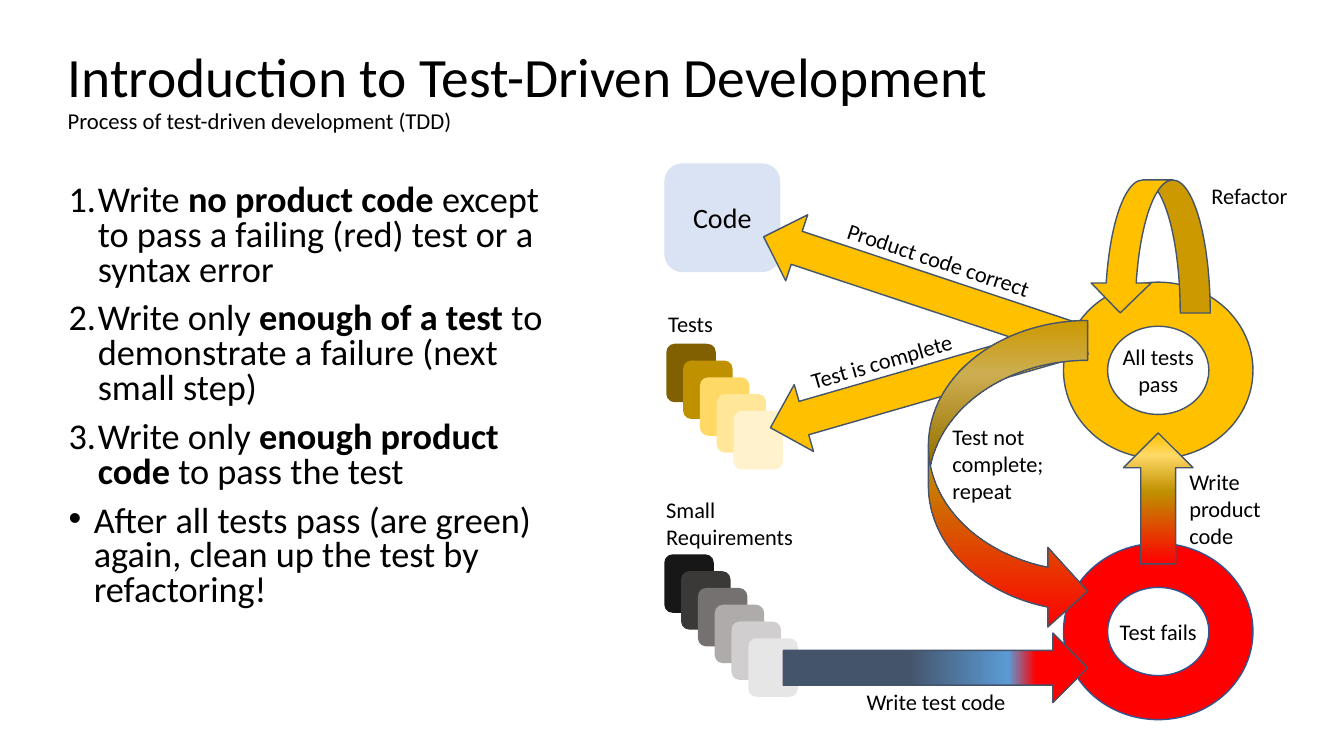
"""Build the slide that introduces the test-driven development cycle."""
from lxml import etree
from pptx import Presentation
from pptx.dml.color import RGBColor
from pptx.enum.shapes import MSO_SHAPE
from pptx.enum.text import MSO_ANCHOR, MSO_AUTO_SIZE, PP_ALIGN
from pptx.oxml.ns import qn
from pptx.util import Inches, Pt

WIDE, HIGH = Inches(13.33), Inches(7.5)
CARD, DONUT = MSO_SHAPE.ROUNDED_RECTANGLE, MSO_SHAPE.DONUT
ARROW, BEND = MSO_SHAPE.RIGHT_ARROW, MSO_SHAPE.CURVED_RIGHT_ARROW
LEFT, MID, RIGHT = PP_ALIGN.LEFT, PP_ALIGN.CENTER, PP_ALIGN.RIGHT
CENTER, TOP = MSO_ANCHOR.MIDDLE, MSO_ANCHOR.TOP
FIXED, GROW = MSO_AUTO_SIZE.NONE, MSO_AUTO_SIZE.SHAPE_TO_FIT_TEXT

BLACK = RGBColor(0x00, 0x00, 0x00)
RED = RGBColor(0xFF, 0x00, 0x00)
GOLD = RGBColor(0xFF, 0xC0, 0x00)
AMBER = RGBColor(0xFF, 0xD9, 0x66)
OCHRE = RGBColor(0xBF, 0x90, 0x00)
BROWN = RGBColor(0x80, 0x60, 0x00)
CREAM = RGBColor(0xFF, 0xE6, 0x99)
PALE = RGBColor(0xFF, 0xF2, 0xCC)
SLATE = RGBColor(0x44, 0x54, 0x6A)
NAVY = RGBColor(0x32, 0x54, 0x91)
BLUE = RGBColor(0x5B, 0x9B, 0xD5)
ICE = RGBColor(0xDA, 0xE3, 0xF3)
GRAYS = [RGBColor(0x18, 0x17, 0x17), RGBColor(0x3B, 0x38, 0x38),
         RGBColor(0x76, 0x71, 0x71), RGBColor(0xAF, 0xAB, 0xAB),
         RGBColor(0xD0, 0xCE, 0xCE), RGBColor(0xE7, 0xE6, 0xE6)]
GOLDS = [BROWN, OCHRE, AMBER, CREAM, PALE]
HEAT = [(0, RED), (55, OCHRE), (83, AMBER), (100, GOLD)]
COOL = [(41, SLATE), (74, BLUE), (83, RED), (100, RED)]

RULES = [
    [("Write ", False), ("no product code ", True),
     ("except to pass a failing (red) test or a syntax error", False)],
    [("Write only ", False), ("enough of a test ", True),
     ("to demonstrate a failure (next small step)", False)],
    [("Write only ", False), ("enough product code ", True),
     ("to pass the test", False)],
    [("After all tests pass (are green) again, "
      "clean up the test by refactoring!", False)],
]


def apply(item, **values):
    """Set each given value on the item."""
    for name, value in values.items():
        setattr(item, name, value)


def spot(x, y, w, h):
    """Turn percentages of the slide into a box of lengths."""
    return [round(share * size / 100)
            for share, size in zip((x, y, w, h), (WIDE, HIGH) * 2)]


def place(shape, box):
    """Move a placeholder to a box."""
    left, top, width, height = spot(*box)
    apply(shape, left=left, top=top, width=width, height=height)


def ink(run, size, bold=False):
    """Give a run its font."""
    apply(run.font, name="Calibri", size=Pt(size), bold=bold)
    run.font.color.rgb = BLACK


def write(frame, text, size=16, align=LEFT):
    """Write lines of text as one paragraph."""
    para = frame.paragraphs[0]
    para.alignment = align
    for at, line in enumerate(text.split("\n")):
        if at:
            para.add_line_break()
        run = para.add_run()
        run.text = line
        ink(run, size)


def blend(fill, stops, angle):
    """Fill with a gradient of percent and colour stops."""
    fill.gradient()
    fill.gradient_angle = angle
    first = fill.gradient_stops[0]
    first.color.rgb = RED
    node = fill._fill._gradFill.find(qn("a:gsLst"))
    node.clear()
    for share, color in stops:
        stop = etree.SubElement(node, qn("a:gs"), pos=str(share * 1000))
        etree.SubElement(stop, qn("a:srgbClr"), val=str(color))


def draw(slide, kind, box, paint, edge=None, turn=0, angle=0):
    """Draw a preset shape with a plain or gradient fill."""
    shape = slide.shapes.add_shape(kind, *spot(*box))
    shape.shadow.inherit = False
    shape.rotation = turn
    if isinstance(paint, list):
        blend(shape.fill, paint, angle)
    else:
        shape.fill.solid()
        shape.fill.fore_color.rgb = paint
    if edge is None:
        shape.line.fill.background()
    else:
        shape.line.color.rgb = edge
        shape.line.width = Pt(1)
    return shape


def stack(slide, x, y, colors):
    """Draw a falling row of cards."""
    for at, color in enumerate(colors):
        draw(slide, CARD, (x + 1.25 * at, y + 2.22 * at, 3.68, 7.73), color)


def ring(slide, y, color, edge, text):
    """Draw a state of the cycle as a ring with text."""
    shape = draw(slide, DONUT, (79.13, y, 14.1, 23.33), color, edge)
    apply(shape.text_frame, word_wrap=True, vertical_anchor=CENTER)
    write(shape.text_frame, text, align=MID)


def label(slide, box, text, align=LEFT, turn=0):
    """Add a caption."""
    shape = slide.shapes.add_textbox(*spot(*box))
    shape.rotation = turn
    apply(shape.text_frame, word_wrap=True, auto_size=GROW)
    write(shape.text_frame, text, align=align)


def mark(para, number):
    """Give a paragraph its number or bullet."""
    props = para._p.get_or_add_pPr()
    dent = Inches(0.29 if number else 0.25)
    props.set("marL", str(dent))
    props.set("indent", str(-dent))
    etree.SubElement(props, qn("a:buFont"),
                     typeface="Calibri" if number else "Arial")
    if number:
        etree.SubElement(props, qn("a:buAutoNum"), type="arabicPeriod")
    else:
        etree.SubElement(props, qn("a:buChar"), char="•")


def head(shape):
    """Fill the title and its subtitle line."""
    place(shape, (4.28, 7.47, 91.73, 9.47))
    frame = shape.text_frame
    apply(frame, word_wrap=True, auto_size=FIXED, vertical_anchor=CENTER)
    write(frame, "Introduction to Test-Driven Development \n"
                 "Process of test-driven development (TDD)", 39.6)
    para = frame.paragraphs[0]
    para.line_spacing = 0.9
    para.runs[1].font.size = Pt(16.2)


def rules(shape):
    """Fill the body with the rules."""
    place(shape, (4.35, 23.73, 38.48, 61.6))
    frame = shape.text_frame
    apply(frame, word_wrap=True, auto_size=FIXED, vertical_anchor=TOP)
    for at, parts in enumerate(RULES):
        para = frame.add_paragraph() if at else frame.paragraphs[0]
        apply(para, line_spacing=0.8, space_before=Pt(10 if at else 0))
        mark(para, at < 3)
        for text, bold in parts:
            run = para.add_run()
            run.text = text
            ink(run, 25.9, bold)


def cycle(slide):
    """Draw the cards, the states and the arrows between them."""
    stack(slide, 49.43, 73.33, GRAYS)
    ring(slide, 71.87, RED, NAVY, "Test fails")
    ring(slide, 37.33, GOLD, SLATE, "All tests pass")
    stack(slide, 49.58, 45.47, GOLDS)
    code = draw(slide, CARD, (49.43, 21.6, 8.63, 14.4), ICE)
    code.text_frame.vertical_anchor = CENTER
    write(code.text_frame, "Code", 20, MID)
    for kind, box, paint, turn, angle in [
            (BEND, (80.63, 24.67, 9.9, 15.87), GOLD, 90, 0),
            (ARROW, (58.28, 83.73, 22.65, 9.2), COOL, 0, 0),
            (ARROW, (81.3, 61.33, 9.75, 9.2), HEAT, 270, 0),
            (ARROW, (56.18, 33.73, 24.98, 9.2), GOLD, 198.4, 0),
            (ARROW, (56.85, 46, 24.23, 9.2), GOLD, 163.9, 0),
            (BEND, (69.08, 42.4, 11.85, 41.07), HEAT, 0, 90)]:
        draw(slide, kind, box, paint, SLATE, turn, angle)


def main():
    """Build and save the slide."""
    deck = Presentation()
    apply(deck, slide_width=WIDE, slide_height=HIGH)
    slide = deck.slides.add_slide(deck.slide_layouts[1])
    head(slide.shapes.title)
    rules(slide.placeholders[1])
    cycle(slide)
    label(slide, (48.83, 64.93, 12.23, 8.53), "Small\nRequirements")
    label(slide, (48.98, 40.4, 5.93, 4.93), "Tests")
    label(slide, (70.13, 55.33, 8.85, 12.13), "Test not complete;\nrepeat")
    label(slide, (60, 90.4, 19.28, 4.93), "Write test code", MID)
    label(slide, (87.75, 61.33, 9.75, 12.13), "Write product code")
    label(slide, (85.95, 23.47, 10.58, 4.93), "Refactor", RIGHT)
    label(slide, (58.8, 45.33, 13.58, 4.93), "Test is complete", MID, 344)
    label(slide, (60, 32, 20.03, 4.93), "Product code correct ", MID, 18.2)
    deck.save("out.pptx")


if __name__ == "__main__":
    main()
